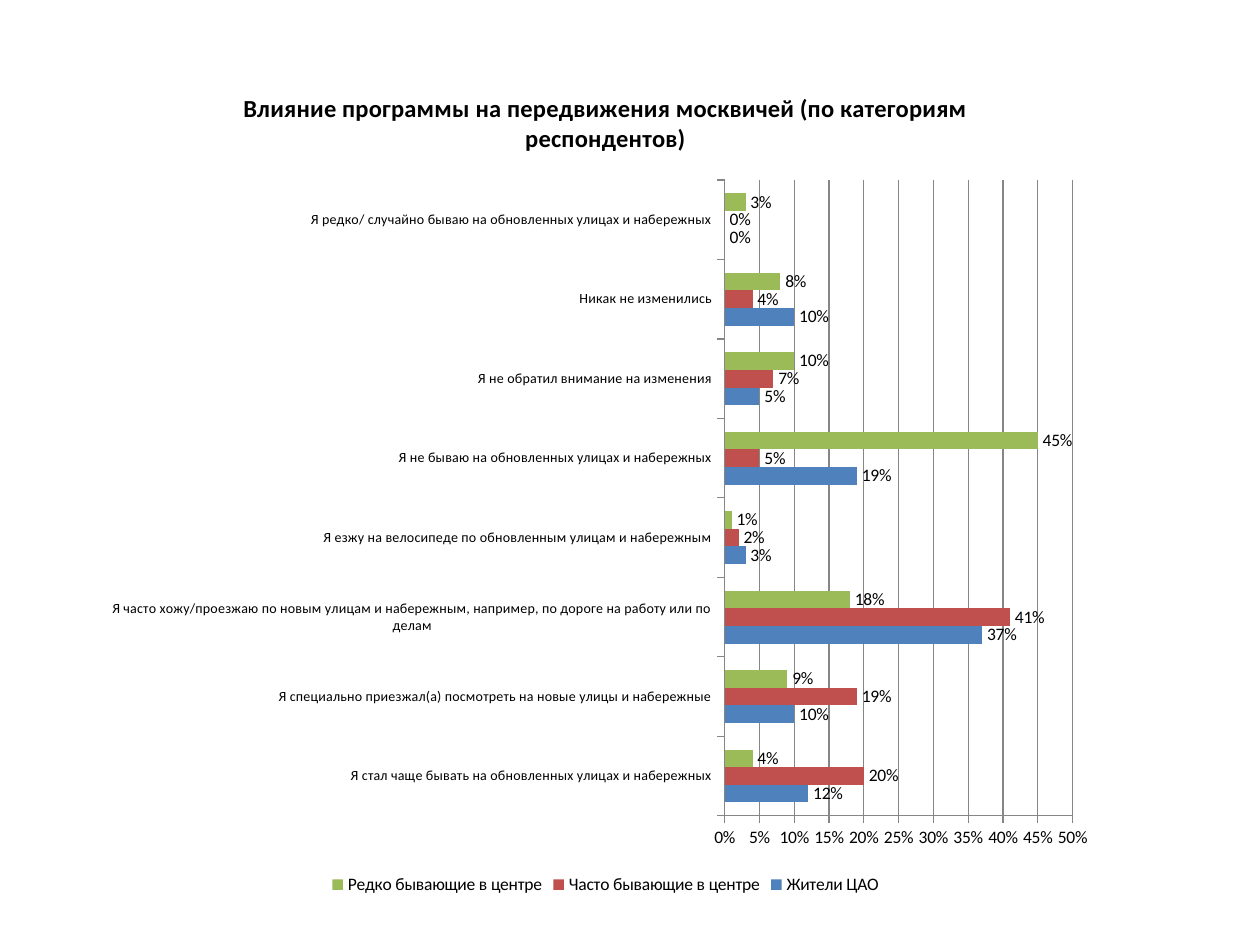
"""Builds a slide with a bar chart of survey answers by respondent group."""
from lxml import etree
from pptx import Presentation
from pptx.chart.data import CategoryChartData
from pptx.dml.color import RGBColor
from pptx.enum.chart import XL_CHART_TYPE, XL_LABEL_POSITION, XL_LEGEND_POSITION, XL_TICK_MARK
from pptx.oxml.ns import qn
from pptx.util import Pt

BAR_CLUSTERED = XL_CHART_TYPE.BAR_CLUSTERED
OUTSIDE_END = XL_LABEL_POSITION.OUTSIDE_END
BOTTOM = XL_LEGEND_POSITION.BOTTOM
TICK_OUTSIDE, TICK_NONE = XL_TICK_MARK.OUTSIDE, XL_TICK_MARK.NONE

COLORS = {
    "text": "000000",
    "axis": "868686",
    "residents": "4F81BD",
    "frequent": "C0504D",
    "rare": "9BBB59",
}
PERCENT = "###0%"
TITLE = "Влияние программы на передвижения москвичей (по категориям респондентов)"
ANSWERS = [
    "Я стал чаще бывать на обновленных улицах и набережных",
    "Я специально приезжал(а) посмотреть на новые улицы и набережные",
    "Я часто хожу/проезжаю по новым улицам и набережным, например, по дороге на работу или по делам",
    "Я езжу на велосипеде по обновленным улицам и набережным",
    "Я не бываю на обновленных улицах и набережных",
    "Я не обратил внимание на изменения",
    "Никак не изменились",
    "Я редко/ случайно бываю на обновленных улицах и набережных",
]
GROUPS = [
    ("Жители ЦАО", "residents", [0.12, 0.10, 0.37, 0.03, 0.19, 0.05, 0.10, 0]),
    ("Часто бывающие в центре", "frequent", [0.20, 0.19, 0.41, 0.02, 0.05, 0.07, 0.04, 0]),
    ("Редко бывающие в центре", "rare", [0.04, 0.09, 0.18, 0.01, 0.45, 0.10, 0.08, 0.03]),
]


class SlideBuilder:
    """Holds the text style and the current slide."""

    def __init__(self, slide, font_name="Calibri"):
        self.slide = slide
        self.font_name = font_name

    def color(self, name):
        return RGBColor.from_string(COLORS[name])

    def style_font(self, font, size, bold=False):
        font.name = self.font_name
        font.size = Pt(size)
        font.bold = bold
        font.color.rgb = self.color("text")

    def style_line(self, line):
        line.color.rgb = self.color("axis")
        line.width = Pt(0.75)

    def style_axis(self, axis, size):
        axis.major_tick_mark = TICK_OUTSIDE
        axis.minor_tick_mark = TICK_NONE
        self.style_font(axis.tick_labels.font, size)
        self.style_line(axis.format.line)

    def place_plot(self, chart, **fractions):
        plot_area = chart.element.find(".//" + qn("c:plotArea"))
        for old_layout in plot_area.findall(qn("c:layout")):
            plot_area.remove(old_layout)
        layout = etree.Element(qn("c:layout"))
        manual = etree.SubElement(layout, qn("c:manualLayout"))
        settings = {"layoutTarget": "inner", "xMode": "edge", "yMode": "edge", **fractions}
        for tag, value in settings.items():
            etree.SubElement(manual, qn("c:" + tag)).set("val", str(value))
        plot_area.insert(0, layout)

    def bar_chart(self, left, top, width, height, title, categories, groups):
        data = CategoryChartData(number_format=PERCENT)
        data.categories = categories
        for name, _, values in groups:
            data.add_series(name, values)
        chart = self.slide.shapes.add_chart(
            BAR_CLUSTERED, Pt(left), Pt(top), Pt(width), Pt(height), data
        ).chart
        self.style_font(chart.font, 10)

        chart.has_title = True
        chart.chart_title.include_in_layout = False
        heading = chart.chart_title.text_frame.paragraphs[0]
        heading.text = title
        self.style_font(heading.font, 14, bold=True)

        chart.has_legend = True
        chart.legend.position = BOTTOM
        chart.legend.include_in_layout = False
        self.style_font(chart.legend.font, 10)

        self.style_axis(chart.category_axis, 8)
        value_axis = chart.value_axis
        self.style_axis(value_axis, 10)
        value_axis.minimum_scale = 0
        value_axis.maximum_scale = 0.5
        value_axis.major_unit = 0.05
        value_axis.tick_labels.number_format = PERCENT
        value_axis.tick_labels.number_format_is_linked = False
        value_axis.has_major_gridlines = True
        self.style_line(value_axis.major_gridlines.format.line)

        plot = chart.plots[0]
        plot.gap_width = 150
        plot.overlap = 0
        plot.vary_by_categories = False
        for series, (_, color_name, _) in zip(plot.series, groups):
            series.invert_if_negative = False
            series.format.fill.solid()
            series.format.fill.fore_color.rgb = self.color(color_name)
            labels = series.data_labels
            labels.show_value = True
            labels.number_format = PERCENT
            labels.number_format_is_linked = False
            labels.position = OUTSIDE_END
            self.style_font(labels.font, 10)
        return chart


def main():
    deck = Presentation()
    deck.slide_width, deck.slide_height = Pt(720), Pt(540)
    builder = SlideBuilder(deck.slides.add_slide(deck.slide_layouts[6]))
    chart = builder.bar_chart(62, 36, 568, 478, TITLE, ANSWERS, GROUPS)
    builder.place_plot(chart, x=0.62, y=0.14, w=0.35, h=0.76)
    deck.save("out.pptx")


if __name__ == "__main__":
    main()
